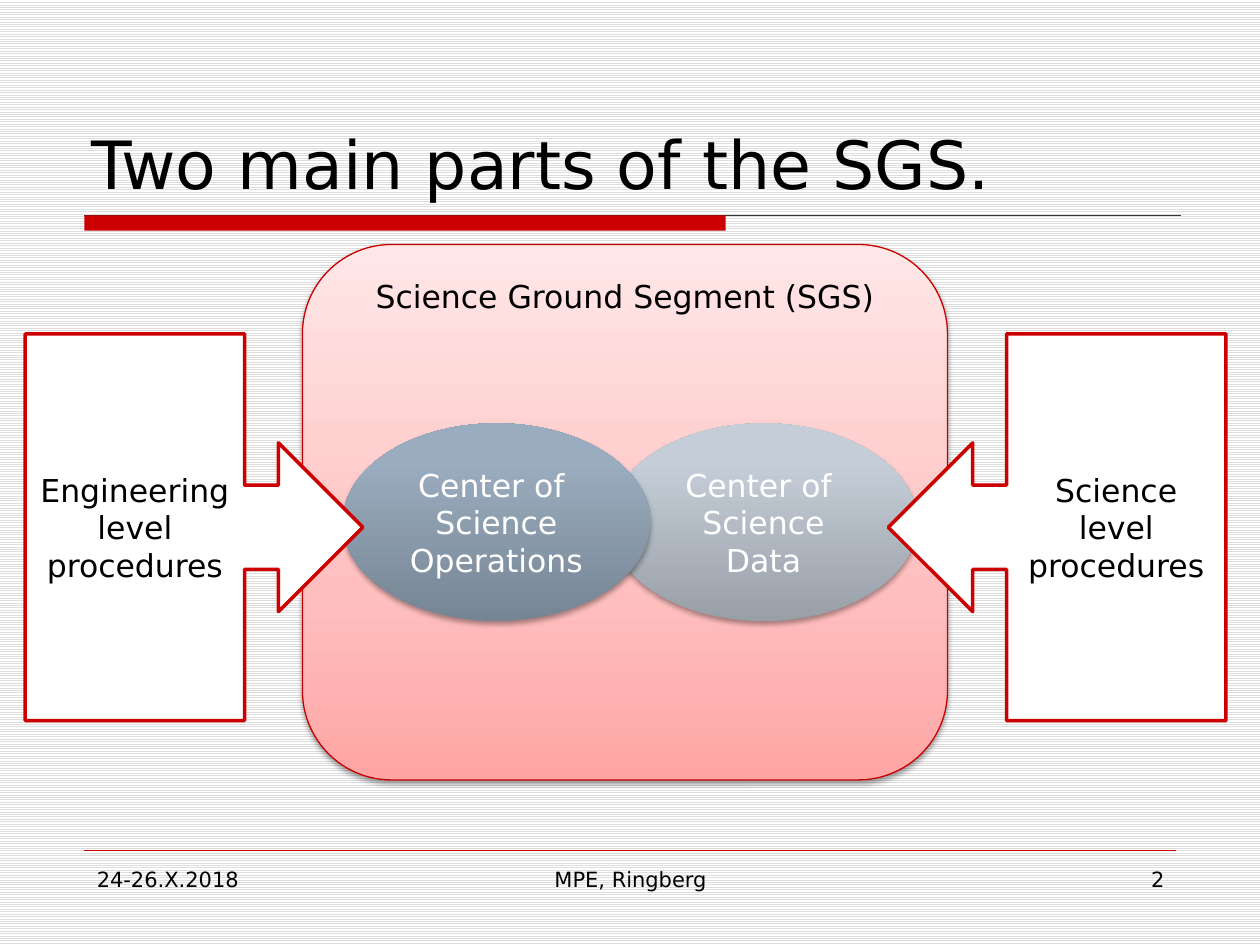
from copy import deepcopy
from dataclasses import dataclass

from lxml import etree
from pptx import Presentation
from pptx import util as u
from pptx.dml.color import RGBColor
from pptx.enum import dml, shapes, text
from pptx.oxml.ns import qn

FONT = "DejaVu Sans"
RED, BLACK, WHITE = "CC0000", "000000", "FFFFFF"
Stops = list[tuple[float, str]]


@dataclass
class Box:
    left: float
    top: float
    width: float
    height: float

    def lengths(self) -> list[u.Length]:
        return [u.Inches(n) for n in (self.left, self.top, self.width, self.height)]


@dataclass
class Center:
    left: float
    label: str
    stops: Stops


@dataclass
class Procedure:
    left: float
    label: str
    flipped: bool


@dataclass
class FooterItem:
    box: Box
    label: str
    align: text.PP_ALIGN


SEGMENT_STOPS = [(0, "FFA5A5"), (0.35, "FFBFBF"), (1, "FFE7E7")]
CENTERS = [
    Center(4.84, "Center of \nScience\nData",
           [(0, "989FA7"), (0.8, "C5CED8"), (1, "C6CFDA")]),
    Center(2.72, "Center of \nScience\nOperations",
           [(0, "768593"), (0.8, "9AACBF"), (1, "9AADC1")]),
]
PROCEDURES = [
    Procedure(0.2, "Engineering\nlevel\nprocedures", False),
    Procedure(7.05, "Science\nlevel\nprocedures", True),
]
FOOTER = [
    FooterItem(Box(0.67, 6.83, 2.17, 0.52), "24-26.X.2018", text.PP_ALIGN.LEFT),
    FooterItem(Box(3.42, 6.83, 3.17, 0.52), "MPE, Ringberg", text.PP_ALIGN.CENTER),
    FooterItem(Box(7.17, 6.83, 2.17, 0.52), "2", text.PP_ALIGN.RIGHT),
]


def color(value: str) -> RGBColor:
    return RGBColor.from_string(value)


def write(shape, content: str, *, size: float = 18, fill: str = BLACK,
          align=text.PP_ALIGN.CENTER, anchor=text.MSO_ANCHOR.MIDDLE) -> None:
    """Fill a shape with one paragraph per line of content."""
    frame = shape.text_frame
    frame.word_wrap = True
    frame.vertical_anchor = anchor
    frame.text = content
    for paragraph in frame.paragraphs:
        paragraph.alignment = align
        font = paragraph.runs[0].font
        font.name, font.size = FONT, u.Pt(size)
        font.color.rgb = color(fill)


def add_text(slide, box: Box, content: str, **formatting) -> None:
    write(slide.shapes.add_textbox(*box.lengths()), content, **formatting)


def add_shape(slide, kind, box: Box, line: str | None = None, line_width: float = 0.75):
    shape = slide.shapes.add_shape(kind, *box.lengths())
    shape.shadow.inherit = False
    if line:
        shape.line.color.rgb = color(line)
        shape.line.width = u.Pt(line_width)
    else:
        shape.line.fill.background()
    return shape


def fill_solid(shape, value: str) -> None:
    shape.fill.solid()
    shape.fill.fore_color.rgb = color(value)


def fill_upward(shape, stops: Stops) -> None:
    """Apply a three-stop gradient that runs from bottom to top."""
    shape.fill.gradient()
    shape.fill.gradient_angle = 90
    stop_list = shape._element.spPr.find(qn("a:gradFill")).find(qn("a:gsLst"))
    stop_list.append(deepcopy(stop_list[-1]))
    for stop, (position, value) in zip(shape.fill.gradient_stops, stops):
        stop.position = position
        stop.color.rgb = color(value)


def add_shadow(shape, alpha: int, distance: float) -> None:
    effects = shape._element.spPr.find(qn("a:effectLst"))
    shadow = etree.SubElement(
        effects, qn("a:outerShdw"), blurRad=str(u.Pt(3.1)),
        dist=str(u.Pt(distance)), dir="5400000", rotWithShape="0")
    black = etree.SubElement(shadow, qn("a:srgbClr"), val=BLACK)
    etree.SubElement(black, qn("a:alpha"), val=str(alpha * 1000))


def add_rule(slide, left: float, right: float, top: float, value: str, width: float) -> None:
    rule = slide.shapes.add_connector(
        shapes.MSO_CONNECTOR.STRAIGHT,
        u.Inches(left), u.Inches(top), u.Inches(right), u.Inches(top))
    rule.line.color.rgb = color(value)
    rule.line.width = u.Pt(width)
    etree.SubElement(rule._element.spPr, qn("a:effectLst"))


def add_center(slide, center: Center) -> None:
    shape = add_shape(slide, shapes.MSO_SHAPE.FLOWCHART_CONNECTOR,
                      Box(center.left, 3.36, 2.44, 1.57))
    fill_upward(shape, center.stops)
    add_shadow(shape, 35, 1.8)
    write(shape, center.label, fill=WHITE)


def add_procedure(slide, procedure: Procedure) -> None:
    shape = add_shape(slide, shapes.MSO_SHAPE.RIGHT_ARROW_CALLOUT,
                      Box(procedure.left, 2.65, 2.68, 3.07), RED, 2)
    fill_solid(shape, WHITE)
    if procedure.flipped:
        shape._element.spPr.xfrm.set("flipH", "1")
    write(shape, procedure.label)


def main() -> None:
    presentation = Presentation()
    presentation.slide_width, presentation.slide_height = u.Inches(10), u.Inches(7.5)
    slide = presentation.slides.add_slide(presentation.slide_layouts[6])

    background = slide.background.fill
    background.patterned()
    background.pattern = dml.MSO_PATTERN.LIGHT_HORIZONTAL
    background.fore_color.rgb = color("DDDDDD")
    background.back_color.rgb = color(WHITE)

    add_rule(slide, 0.67, 9.37, 1.71, "333333", 0.75)
    title_bar = add_shape(slide, shapes.MSO_SHAPE.RECTANGLE, Box(0.67, 1.71, 5.09, 0.12))
    fill_solid(title_bar, RED)
    add_rule(slide, 0.67, 9.33, 6.75, RED, 0.25)
    add_text(slide, Box(0.63, 0.33, 8.75, 1.33), "Two main parts of the SGS.",
             size=38, align=text.PP_ALIGN.LEFT, anchor=text.MSO_ANCHOR.BOTTOM)

    segment = add_shape(slide, shapes.MSO_SHAPE.ROUNDED_RECTANGLE,
                        Box(2.4, 1.94, 5.12, 4.25), "C80000")
    fill_upward(segment, SEGMENT_STOPS)
    add_shadow(segment, 38, 1.6)
    write(segment, "Science Ground Segment (SGS)", anchor=text.MSO_ANCHOR.TOP)

    for center in CENTERS:
        add_center(slide, center)
    for procedure in PROCEDURES:
        add_procedure(slide, procedure)
    for item in FOOTER:
        add_text(slide, item.box, item.label, size=12, align=item.align,
                 anchor=text.MSO_ANCHOR.TOP)

    presentation.save("out.pptx")


if __name__ == "__main__":
    main()
